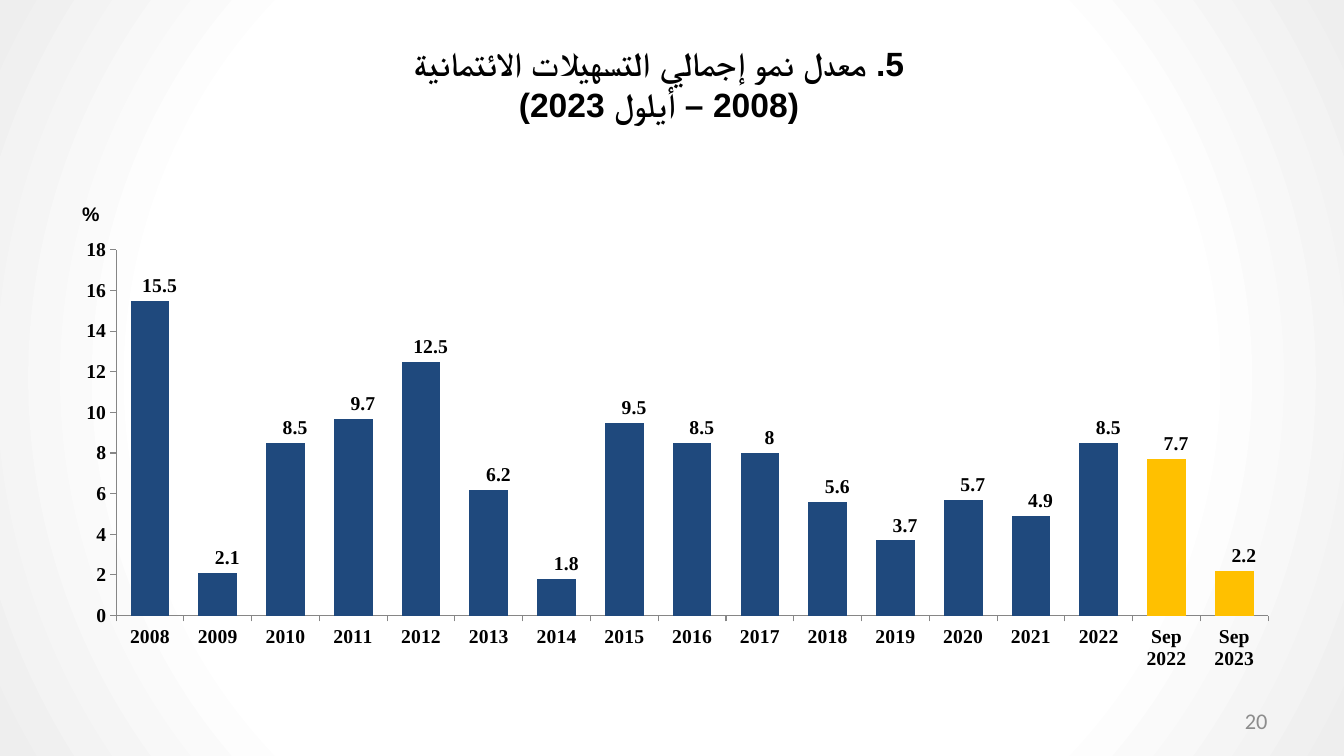
from dataclasses import dataclass

from lxml import etree
from pptx import Presentation
from pptx.chart.data import CategoryChartData
from pptx.dml.color import RGBColor
from pptx.enum.chart import XL_CHART_TYPE, XL_LABEL_POSITION, XL_TICK_MARK
from pptx.enum.text import MSO_ANCHOR, MSO_AUTO_SIZE, PP_ALIGN
from pptx.oxml import parse_xml
from pptx.oxml.ns import nsdecls, qn
from pptx.util import Inches, Pt


@dataclass(frozen=True)
class Theme:
    ink: RGBColor = RGBColor(0x00, 0x00, 0x00)
    muted: RGBColor = RGBColor(0x8C, 0x8C, 0x8C)
    axis: RGBColor = RGBColor(0x86, 0x86, 0x86)
    annual: RGBColor = RGBColor(0x1F, 0x49, 0x7D)
    september: RGBColor = RGBColor(0xFF, 0xC0, 0x00)
    centre: RGBColor = RGBColor(0xFF, 0xFF, 0xFF)
    edge: RGBColor = RGBColor(0xEE, 0xEE, 0xEE)
    title_size: Pt = Pt(24)
    number_size: Pt = Pt(16)
    chart_size: Pt = Pt(14)
    body_font: str = "Calibri"
    arabic_font: str = "Arial"
    chart_font: str = "Times New Roman"


THEME = Theme()

PERIODS = [str(year) for year in range(2008, 2023)] + ["Sep 2022", "Sep 2023"]
GROWTH = [15.5, 2.1, 8.5, 9.7, 12.5, 6.2, 1.8, 9.5, 8.5,
          8, 5.6, 3.7, 5.7, 4.9, 8.5, 7.7, 2.2]


def paint_background(slide):
    fill = slide.background.fill
    fill.gradient()
    stops = [(0.67, THEME.centre), (1, THEME.edge)]
    for stop, (position, color) in zip(fill.gradient_stops, stops):
        stop.position = position
        stop.color.rgb = color
    # Radial shading from the middle of the slide
    gradient = slide.element.find(".//" + qn("a:gradFill"))
    linear = gradient.find(qn("a:lin"))
    radial = parse_xml(
        f'<a:path {nsdecls("a")} path="circle">'
        '<a:fillToRect l="50000" t="50000" r="50000" b="50000"/></a:path>')
    gradient.replace(linear, radial)


def add_label(slide, box, text, size, font, color, align=PP_ALIGN.CENTER,
              anchor=MSO_ANCHOR.MIDDLE, bold=True, rtl=True):
    label = slide.shapes.add_textbox(*map(Inches, box))
    frame = label.text_frame
    frame.text = text
    frame.word_wrap = True
    frame.vertical_anchor = anchor
    for paragraph in frame.paragraphs:
        paragraph.alignment = align
        if rtl:
            paragraph._p.get_or_add_pPr().set("rtl", "1")
        for run in paragraph.runs:
            run.font.size, run.font.bold = size, bold
            run.font.name = font
            run.font.color.rgb = color
            if rtl:
                script_font = etree.SubElement(run.font._element, qn("a:cs"))
                script_font.set("typeface", THEME.arabic_font)
    return frame


def style_axis(axis):
    axis.has_major_gridlines = False
    axis.major_tick_mark = XL_TICK_MARK.OUTSIDE
    axis.minor_tick_mark = XL_TICK_MARK.NONE
    axis.format.line.color.rgb = THEME.axis
    axis.format.line.width = Pt(0.75)


def place_plot(chart, x, y, w, h):
    plot_area = chart._chartSpace.chart.plotArea
    for layout in plot_area.findall(qn("c:layout")):
        plot_area.remove(layout)
    places = "".join(f'<c:{tag} val="{value}"/>' for tag, value in
                     zip("xywh", (x, y, w, h)))
    plot_area.insert(0, parse_xml(
        f'<c:layout {nsdecls("c")}><c:manualLayout>'
        '<c:layoutTarget val="inner"/><c:xMode val="edge"/>'
        f'<c:yMode val="edge"/>{places}</c:manualLayout></c:layout>'))


def add_growth_chart(slide, box):
    data = CategoryChartData()
    data.categories = PERIODS
    for name in ("Series 1", "Series 2"):
        data.add_series(name, GROWTH)
    chart = slide.shapes.add_chart(
        XL_CHART_TYPE.COLUMN_CLUSTERED, *map(Inches, box), data).chart
    chart.has_legend = chart.has_title = False
    font = chart.font
    font.name, font.size, font.bold = THEME.chart_font, THEME.chart_size, True
    font.color.rgb = THEME.ink
    place_plot(chart, 0.038, 0.025, 0.961, 0.842)

    # Axes
    style_axis(chart.category_axis)
    style_axis(chart.value_axis)
    chart.value_axis.minimum_scale = 0
    chart.value_axis.maximum_scale = 18
    chart.value_axis.major_unit = 2

    # Paired columns, with the September periods highlighted
    plot = chart.plots[0]
    plot.gap_width, plot.overlap = 150, 0
    plot.vary_by_categories = False
    for series in plot.series:
        series.format.fill.solid()
        series.format.fill.fore_color.rgb = THEME.annual
        for index, period in enumerate(PERIODS):
            if period.startswith("Sep"):
                point_fill = series.points[index].format.fill
                point_fill.solid()
                point_fill.fore_color.rgb = THEME.september

    # Values above the second column of each pair
    values = plot.series[1].data_labels
    values.show_value = True
    values.position = XL_LABEL_POSITION.OUTSIDE_END


def main():
    prs = Presentation()
    prs.slide_width, prs.slide_height = Inches(13.33), Inches(7.5)
    slide = prs.slides.add_slide(prs.slide_layouts[6])
    paint_background(slide)

    # Title
    title = add_label(
        slide, (3.88, 0.38, 5.31, 0.91),
        "5. معدل نمو إجمالي التسهيلات الائتمانية\n(2008 – أيلول 2023)",
        THEME.title_size, THEME.body_font, THEME.ink, anchor=MSO_ANCHOR.TOP)
    title.auto_size = MSO_AUTO_SIZE.SHAPE_TO_FIT_TEXT

    # Unit of the value axis
    unit = add_label(slide, (0.6, 1.86, 0.6, 0.51), "%", THEME.chart_size,
                     THEME.arabic_font, THEME.ink)
    unit.margin_left = unit.margin_right = Inches(0.04)
    unit.margin_top = unit.margin_bottom = Inches(0.03)

    # Slide number
    add_label(slide, (9.56, 6.95, 3.11, 0.4), "20", THEME.number_size,
              THEME.body_font, THEME.muted, align=PP_ALIGN.RIGHT,
              bold=False, rtl=False)

    add_growth_chart(slide, (0.7, 2.37, 11.89, 4.31))
    prs.save("out.pptx")


if __name__ == "__main__":
    main()
